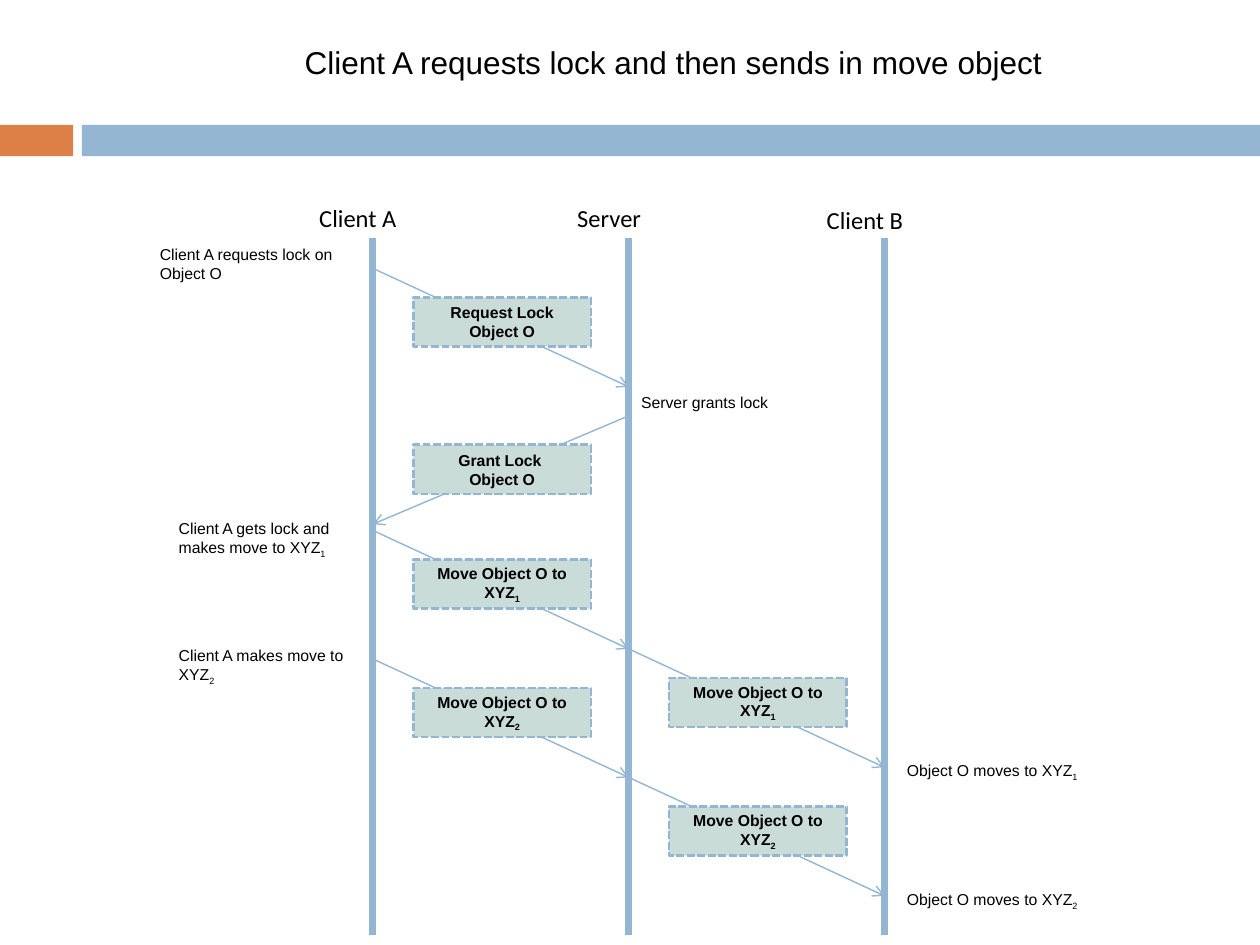
from dataclasses import dataclass

from lxml import etree
from pptx import Presentation
from pptx.dml.color import RGBColor
from pptx.enum.dml import MSO_LINE_DASH_STYLE as Dash
from pptx.enum.shapes import MSO_CONNECTOR as Connector, MSO_SHAPE as Preset
from pptx.enum.text import MSO_ANCHOR as Anchor, MSO_AUTO_SIZE as AutoSize, PP_ALIGN as Align
from pptx.oxml.ns import qn
from pptx.util import Inches, Pt


@dataclass(frozen=True)
class Theme:
    blue: RGBColor = RGBColor(0x94, 0xB6, 0xD2)
    orange: RGBColor = RGBColor(0xDD, 0x80, 0x47)
    label_fill: RGBColor = RGBColor(0xCA, 0xDC, 0xD8)
    ink: RGBColor = RGBColor(0, 0, 0)
    font: str = "Arial"
    lane_font: str = "Calibri"
    title_size: float = 18
    lane_size: float = 14
    note_size: float = 9
    lifeline_width: float = 4
    arrow_width: float = 0.79
    label_border: float = 1.5


THEME = Theme()

LANE_GAP = 2.03
CLIENT_A, SERVER, CLIENT_B = (2.96 + LANE_GAP * lane for lane in range(3))
LIFELINE_TOP, LIFELINE_BOTTOM = 1.89, 7.42
MESSAGE_DROP = 0.94

# name, left, top, width
LANE_NAMES = [
    ("Client A", 1.98, 1.56, 1.72),
    ("Server", 3.7, 1.56, 2.27),
    ("Client B", 5.73, 1.58, 2.27),
]

# label, sending lane, receiving lane, top, drop
MESSAGES = [
    ("Request Lock Object O", CLIENT_A, SERVER, 2.13, MESSAGE_DROP),
    ("Grant Lock \nObject O", SERVER, CLIENT_A, 3.3, 0.86),
    ("Move Object O to XYZ_1", CLIENT_A, SERVER, 4.21, MESSAGE_DROP),
    ("Move Object O to XYZ_1", SERVER, CLIENT_B, 5.15, MESSAGE_DROP),
    ("Move Object O to XYZ_2", CLIENT_A, SERVER, 5.23, MESSAGE_DROP),
    ("Move Object O to XYZ_2", SERVER, CLIENT_B, 6.17, MESSAGE_DROP),
]

# text, left, top, height
NOTES = [
    ("Client A requests lock on Object O", 1.17, 1.89, 0.4),
    ("Server grants lock", 4.99, 3.07, 0.25),
    ("Client A gets lock and\nmakes move to XYZ_1", 1.32, 4.07, 0.4),
    ("Client A makes move to XYZ_2", 1.32, 5.08, 0.4),
    ("Object O moves to XYZ_1", 7.1, 5.99, 0.25),
    ("Object O moves to XYZ_2", 7.1, 7.01, 0.25),
]


def write_text(frame, text, size=THEME.note_size, font=THEME.font, bold=False, align=Align.LEFT):
    """Fill the frame, one paragraph a line; what follows an underscore is subscript."""
    for number, line in enumerate(text.split("\n")):
        para = frame.add_paragraph() if number else frame.paragraphs[0]
        para.alignment = align
        base, _, subscript = line.partition("_")
        for piece, offset in ((base, None), (subscript, "-25000")):
            if not piece:
                continue
            span = para.add_run()
            span.text = piece
            span.font.size = Pt(size)
            span.font.name = font
            span.font.bold = bold
            span.font.color.rgb = THEME.ink
            if offset:
                span._r.get_or_add_rPr().set("baseline", offset)


def add_text(page, box, text, wrap=True, **text_format):
    frame = page.shapes.add_textbox(*map(Inches, box)).text_frame
    frame.word_wrap = wrap
    frame.auto_size = AutoSize.SHAPE_TO_FIT_TEXT
    write_text(frame, text, **text_format)


def add_box(page, box, fill):
    shape = page.shapes.add_shape(Preset.RECTANGLE, *map(Inches, box))
    shape.shadow.inherit = False
    shape.fill.solid()
    shape.fill.fore_color.rgb = fill
    shape.line.fill.background()
    return shape


def add_line(page, start, end, width, arrow=False):
    line = page.shapes.add_connector(Connector.STRAIGHT, *map(Inches, (*start, *end)))
    line.line.color.rgb = THEME.blue
    line.line.width = Pt(width)
    if arrow:
        etree.SubElement(line.line._get_or_add_ln(), qn("a:tailEnd"), type="arrow")
    etree.SubElement(line._element.spPr, qn("a:effectLst"))


def add_label(page, box, text):
    label = add_box(page, box, THEME.label_fill)
    label.line.color.rgb = THEME.blue
    label.line.width = Pt(THEME.label_border)
    label.line.dash_style = Dash.SQUARE_DOT
    label.text_frame.word_wrap = True
    label.text_frame.vertical_anchor = Anchor.MIDDLE
    write_text(label.text_frame, text, bold=True, align=Align.CENTER)


def add_header(page, left, top, width, height):
    """Title above a two-colour band at the foot of the box."""
    band_height, accent_width, band_left = 0.25, 0.58, 0.65
    band_top = top + height - band_height
    add_box(page, (left, band_top, accent_width, band_height), THEME.orange)
    add_box(page, (left + band_left, band_top, width - band_left, band_height), THEME.blue)
    add_text(page, (left + 2.32, top + 0.29, 6.11, 0.4),
             "Client A requests lock and then sends in move object",
             wrap=False, size=THEME.title_size)


def add_message(page, text, sender, receiver, top, drop):
    """Arrow between two lifelines with its label over the middle."""
    add_line(page, (sender, top), (receiver, top + drop), THEME.arrow_width, arrow=True)
    add_label(page, (min(sender, receiver) + 0.32, top + 0.23, 1.41, 0.39), text)


def add_sequence(page):
    for lane in (CLIENT_A, SERVER, CLIENT_B):
        add_line(page, (lane, LIFELINE_TOP), (lane, LIFELINE_BOTTOM), THEME.lifeline_width)
    for name, left, top, width in LANE_NAMES:
        add_text(page, (left, top, width, 0.34), name, size=THEME.lane_size,
                 font=THEME.lane_font, align=Align.CENTER)
    for message in MESSAGES:
        add_message(page, *message)
    for text, left, top, height in NOTES:
        add_text(page, (left, top, 1.8, height), text)


def main():
    deck = Presentation()
    deck.slide_width, deck.slide_height = Inches(10), Inches(7.5)
    page = deck.slides.add_slide(deck.slide_layouts[6])
    add_header(page, 0, 0, 10, 1.24)
    add_sequence(page)
    deck.save("out.pptx")


if __name__ == "__main__":
    main()
